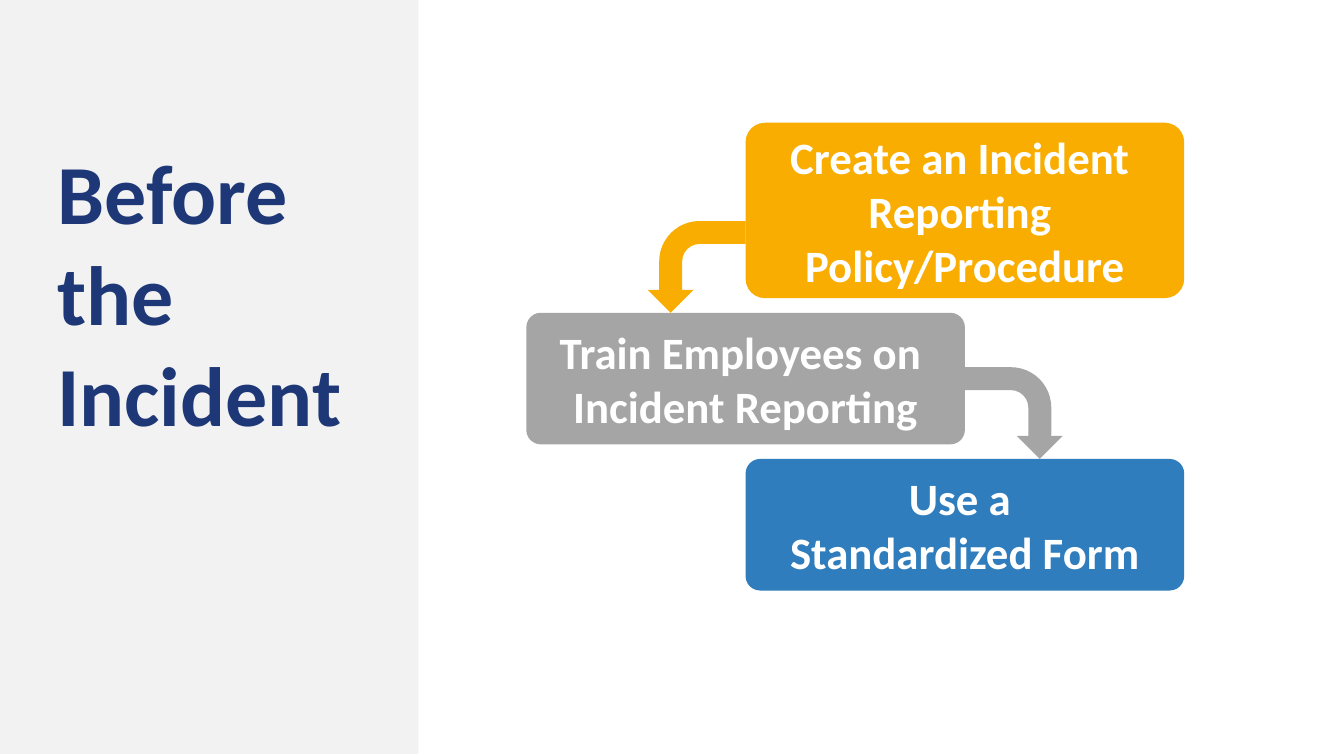
from dataclasses import dataclass
from itertools import pairwise

from pptx import Presentation
from pptx.dml.color import RGBColor
from pptx.enum.shapes import MSO_SHAPE
from pptx.enum.text import MSO_ANCHOR, PP_ALIGN
from pptx.shapes.autoshape import Shape
from pptx.slide import Slide
from pptx.text.text import TextFrame
from pptx.util import Inches, Pt

GRID = Inches(4.35) / 30
CARD_COLUMNS = 30
CARD_GAP = 1
FIRST_CARD_ROW = 8.4
ARROW_WIDTH, ARROW_LENGTH = 6.28, 6.69
CORNER = 0.11

WHITE = RGBColor(0xFF, 0xFF, 0xFF)
PANEL_GRAY = RGBColor(0xF2, 0xF2, 0xF2)
NAVY = RGBColor(0x1E, 0x37, 0x76)
AMBER = RGBColor(0xF9, 0xAD, 0x00)
GRAY = RGBColor(0xA5, 0xA5, 0xA5)
BLUE = RGBColor(0x2F, 0x7D, 0xBC)

TITLE_FONT = {"name": "Calibri", "size": Pt(60), "bold": True}
CARD_FONT = {"name": "Calibri", "size": Pt(32), "bold": True}


@dataclass
class Card:
    column: int
    rows: int
    color: RGBColor
    lines: list[str]
    row: float = 0


CARDS = [
    Card(51, 12, AMBER, ["Create an Incident ", "Reporting ", "Policy/Procedure"]),
    Card(36, 9, GRAY, ["Train Employees on ", "Incident Reporting"]),
    Card(51, 9, BLUE, ["Use a ", "Standardized Form"]),
]


def grid_box(column: float, row: float, columns: float, rows: float) -> list[int]:
    return [round(GRID * count) for count in (column, row, columns, rows)]


def add_filled_shape(slide: Slide, kind: MSO_SHAPE, box: list[int], color: RGBColor) -> Shape:
    shape = slide.shapes.add_shape(kind, *box)
    shape.shadow.inherit = False
    shape.fill.solid()
    shape.fill.fore_color.rgb = color
    shape.line.fill.background()
    return shape


def write_lines(
    frame: TextFrame, lines: list[str], font: dict, color: RGBColor, alignment: PP_ALIGN
) -> None:
    frame.word_wrap = True
    for index, line in enumerate(lines):
        paragraph = frame.add_paragraph() if index else frame.paragraphs[0]
        paragraph.alignment = alignment
        run = paragraph.add_run()
        run.text = line
        for attribute, value in font.items():
            setattr(run.font, attribute, value)
        run.font.color.rgb = color


def add_card(slide: Slide, card: Card) -> None:
    box = grid_box(card.column, card.row, CARD_COLUMNS, card.rows)
    shape = add_filled_shape(slide, MSO_SHAPE.ROUNDED_RECTANGLE, box, card.color)
    shape.adjustments[0] = CORNER
    shape.text_frame.vertical_anchor = MSO_ANCHOR.MIDDLE
    write_lines(shape.text_frame, card.lines, CARD_FONT, WHITE, PP_ALIGN.CENTER)


def add_arrow(slide: Slide, start: Card, end: Card) -> None:
    to_right = end.column > start.column
    if to_right:
        middle_column = start.column + CARD_COLUMNS + ARROW_LENGTH / 2
    else:
        middle_column = start.column - ARROW_LENGTH / 2
    middle_row = end.row - ARROW_WIDTH / 2
    box = grid_box(
        middle_column - ARROW_WIDTH / 2,
        middle_row - ARROW_LENGTH / 2,
        ARROW_WIDTH,
        ARROW_LENGTH,
    )
    arrow = add_filled_shape(slide, MSO_SHAPE.BENT_ARROW, box, start.color)
    for index, value in enumerate((0.25, 0.25, 0.25, 0.44)):
        arrow.adjustments[index] = value
    arrow.rotation = 90 if to_right else 270
    if not to_right:
        arrow._element.spPr.xfrm.set("flipH", "1")


def main() -> None:
    presentation = Presentation()
    presentation.slide_width = Inches(13.33)
    presentation.slide_height = Inches(7.5)
    slide = presentation.slides.add_slide(presentation.slide_layouts[6])

    panel = [0, Inches(-0.02), Inches(4.15), presentation.slide_height]
    add_filled_shape(slide, MSO_SHAPE.RECTANGLE, panel, PANEL_GRAY)

    row = FIRST_CARD_ROW
    for card in CARDS:
        card.row = row
        add_card(slide, card)
        row += card.rows + CARD_GAP
    for start, end in pairwise(CARDS):
        add_arrow(slide, start, end)

    title = slide.shapes.add_textbox(*grid_box(3.25, 9.3, 21, 21.6))
    write_lines(
        title.text_frame, ["Before", "the", "Incident"], TITLE_FONT, NAVY, PP_ALIGN.LEFT
    )
    presentation.save("out.pptx")


if __name__ == "__main__":
    main()
